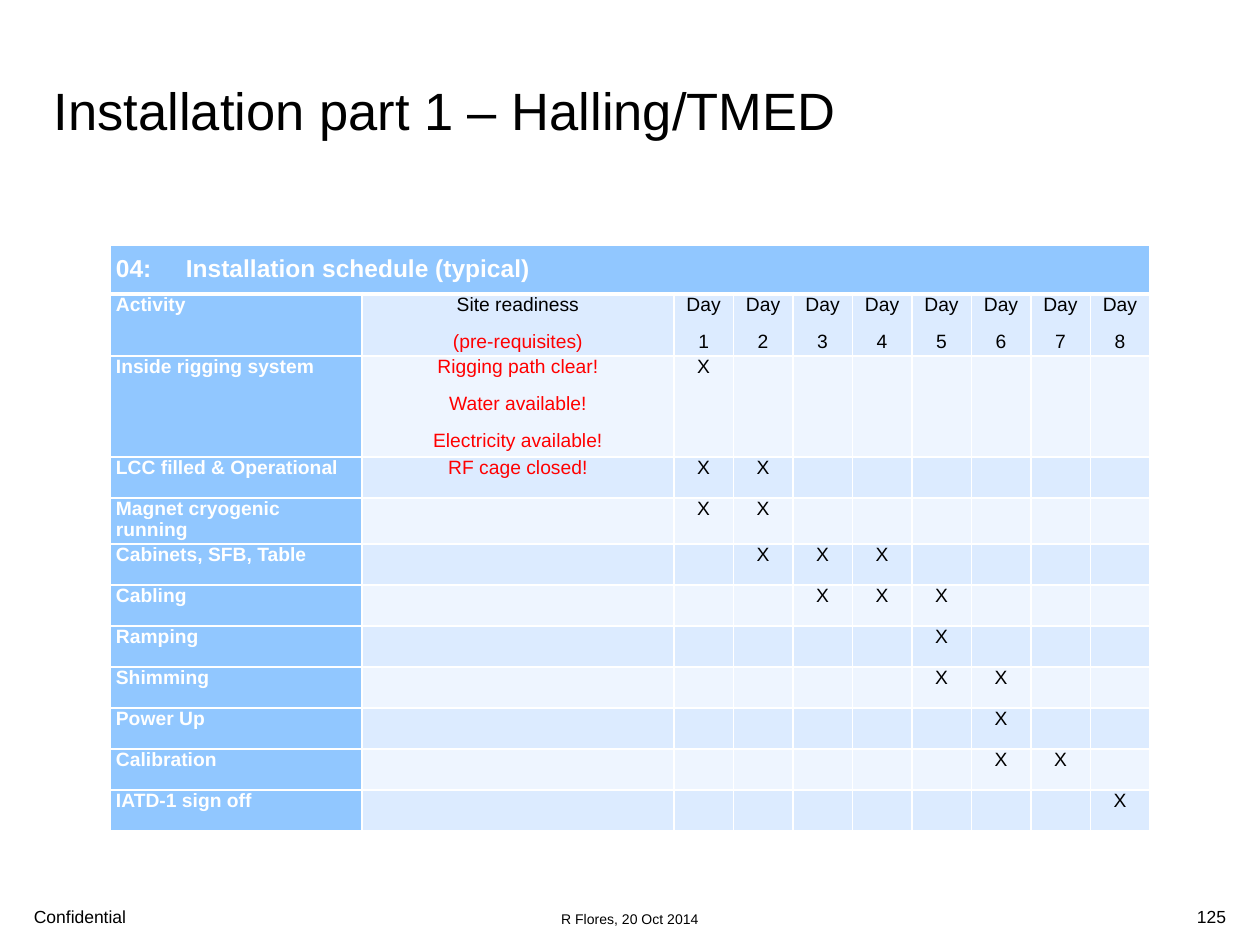
from lxml.etree import SubElement
from pptx import Presentation
from pptx.dml.color import RGBColor
from pptx.enum.text import MSO_ANCHOR as Anchor, PP_ALIGN as Align
from pptx.oxml import parse_xml
from pptx.oxml.ns import nsdecls, qn
from pptx.util import Pt

PX = 914400 // 126
BLACK = RGBColor(0x00, 0x00, 0x00)
WHITE = RGBColor(0xFF, 0xFF, 0xFF)
RED = RGBColor(0xFF, 0x00, 0x00)
HEADER_BLUE = RGBColor(0x91, 0xC7, 0xFF)
BANDS = RGBColor(0xDC, 0xEB, 0xFF), RGBColor(0xEE, 0xF5, 0xFF)

# text, (left, top, width, height), size, alignment, anchor
TEXTS = [
    ("Confidential", (34, 906, 253, 21), 10, Align.LEFT, Anchor.BOTTOM),
    ("R Flores, 20 Oct 2014", (280, 906, 700, 21), 8, Align.CENTER, Anchor.BOTTOM),
    ("Installation part 1 – Halling/TMED", (54, 78, 1152, 126), 30, Align.LEFT, Anchor.TOP),
    ("125", (1182, 906, 44, 21), 10, Align.RIGHT, Anchor.TOP),
]
SCHEDULE_TITLE = "04:\tInstallation schedule (typical)"
DAY_COUNT = 8
# activity, prerequisites, first and last day
ACTIVITIES = [
    ("Inside rigging system",
     ["Rigging path clear!", "Water available!", "Electricity available!"], 1, 1),
    ("LCC filled & Operational", ["RF cage closed!"], 1, 2),
    ("Magnet cryogenic running", [], 1, 2),
    ("Cabinets, SFB, Table", [], 2, 4),
    ("Cabling", [], 3, 5),
    ("Ramping", [], 5, 5),
    ("Shimming", [], 5, 6),
    ("Power Up", [], 6, 6),
    ("Calibration", [], 6, 7),
    ("IATD-1 sign off", [], 8, 8),
]
TABLE_LEFT, TABLE_TOP = 110, 245
ACTIVITY_WIDTH, READINESS_WIDTH, DAYS_WIDTH = 252, 312, 476
TITLE_HEIGHT, HEADER_HEIGHT, RIGGING_HEIGHT, ROW_HEIGHT = 49, 58, 96, 41
TITLE_TAB = 70


def write(para, text, size, color=BLACK, bold=False, align=Align.LEFT):
    para.alignment = align
    span = para.add_run()
    span.text = text
    for name, value in {"name": "Arial", "size": Pt(size), "bold": bold}.items():
        setattr(span.font, name, value)
    span.font.color.rgb = color


def fill_cell(cell, lines, fill, size=11, bold=False, align=Align.CENTER):
    """Write (text, color) lines, one paragraph each, on a filled cell."""
    margins = {"margin_left": 6, "margin_right": 6, "margin_top": 0, "margin_bottom": 0}
    for name, value in margins.items():
        setattr(cell, name, value * PX)
    cell.fill.solid()
    cell.fill.fore_color.rgb = fill
    for index, (text, color) in enumerate(lines):
        frame = cell.text_frame
        para = frame.add_paragraph() if index else frame.paragraphs[0]
        para.space_before = Pt(6 if index else 0)
        para.space_after = Pt(3)
        write(para, text, size, color, bold, align)


def add_borders(cell, top, bottom):
    """Draw white borders of the given widths in points, 1 pt at the sides."""
    properties = cell._tc.get_or_add_tcPr()
    for index, (side, width) in enumerate(zip("LRTB", (1, 1, top, bottom))):
        properties.insert(index, parse_xml(
            f'<a:ln{side} {nsdecls("a")} w="{Pt(width)}"><a:solidFill>'
            f'<a:srgbClr val="{WHITE}"/></a:solidFill></a:ln{side}>'))


def add_schedule(slide):
    days = range(1, DAY_COUNT + 1)
    widths = [ACTIVITY_WIDTH * PX, READINESS_WIDTH * PX] + [DAYS_WIDTH * PX // DAY_COUNT] * DAY_COUNT
    heights = [TITLE_HEIGHT, HEADER_HEIGHT, RIGGING_HEIGHT] + [ROW_HEIGHT] * (len(ACTIVITIES) - 1)
    table = slide.shapes.add_table(
        len(heights), len(widths), TABLE_LEFT * PX, TABLE_TOP * PX,
        sum(widths), sum(heights) * PX).table
    for column, width in zip(table.columns, widths):
        column.width = width
    for row, height in zip(table.rows, heights):
        row.height = height * PX

    title = table.cell(0, 0)
    title.merge(table.cell(0, len(widths) - 1))
    tabs = SubElement(title.text_frame.paragraphs[0]._p.get_or_add_pPr(), qn("a:tabLst"))
    SubElement(tabs, qn("a:tab"), pos=str(TITLE_TAB * PX), algn="l")
    fill_cell(title, [(SCHEDULE_TITLE, WHITE)], HEADER_BLUE, 14, True, Align.LEFT)
    title.vertical_anchor = Anchor.MIDDLE

    rows = [("Activity", [("Site readiness", BLACK), ("(pre-requisites)", RED)],
             [[("Day", BLACK), (str(day), BLACK)] for day in days])]
    for activity, needs, first, last in ACTIVITIES:
        marks = [[("X", BLACK)] if first <= day <= last else [] for day in days]
        rows.append((activity, [(need, RED) for need in needs], marks))
    for index, (activity, readiness, marks) in enumerate(rows):
        row = index + 1
        fill_cell(table.cell(row, 0), [(activity, WHITE)], HEADER_BLUE, bold=True, align=Align.LEFT)
        for column, lines in enumerate([readiness, *marks], 1):
            fill_cell(table.cell(row, column), lines, BANDS[index % 2])

    for index, row in enumerate(table.rows):
        for cell in row.cells:
            add_borders(cell, 3 if index == 1 else 1, 3 if index == 0 else 1)


def main():
    deck = Presentation()
    deck.slide_width, deck.slide_height = 1260 * PX, 945 * PX
    slide = deck.slides.add_slide(deck.slide_layouts[6])
    for text, place, size, align, anchor in TEXTS:
        frame = slide.shapes.add_textbox(*(length * PX for length in place)).text_frame
        settings = {"word_wrap": True, "vertical_anchor": anchor, "margin_left": 0,
                    "margin_right": 0, "margin_top": 0, "margin_bottom": 0}
        for name, value in settings.items():
            setattr(frame, name, value)
        write(frame.paragraphs[0], text, size, align=align)
    add_schedule(slide)
    deck.save("out.pptx")


if __name__ == "__main__":
    main()
